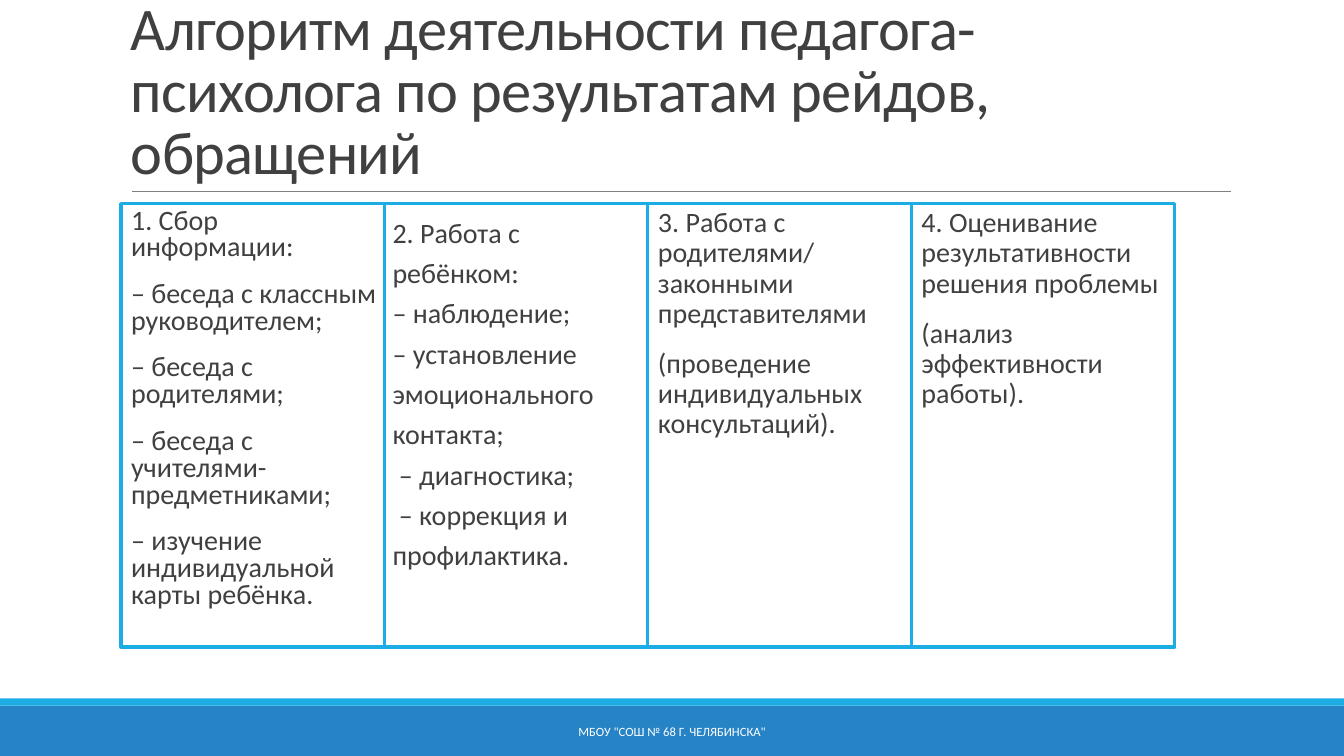
from pptx import Presentation
from pptx.dml.color import RGBColor
from pptx.enum.shapes import MSO_CONNECTOR, MSO_SHAPE
from pptx.enum.text import MSO_ANCHOR, PP_ALIGN
from pptx.oxml.ns import qn
from pptx.util import Inches, Pt

BLUE = RGBColor(0x26, 0x83, 0xC6)
CYAN = RGBColor(0x1C, 0xAD, 0xE4)
GRAY = RGBColor(0x80, 0x80, 0x80)
DARK = RGBColor(0x40, 0x40, 0x40)
WHITE = RGBColor(0xFF, 0xFF, 0xFF)
FONT = "Calibri"

# Grid of the four stage boxes, in inches
GRID_LEFT, GRID_TOP = 1.2, 2.02
COL_W, ROW_H = 2.613, 4.4

TITLE = "Алгоритм деятельности педагога-психолога по результатам рейдов, обращений"
FOOTER = 'МБОУ "СОШ № 68 Г. ЧЕЛЯБИНСКА"'

# Each stage: line spacing, space before, space after, left indent, paragraphs
STAGES = [
    (0.8, 12, 2, 0.1, [
        "1. Сбор информации:",
        "– беседа с классным руководителем;",
        "– беседа с родителями;",
        "– беседа с учителями-предметниками;",
        "– изучение индивидуальной карты ребёнка.",
    ]),
    (1.2, 0, 0, 0.08, [
        "2. Работа с ребёнком:",
        "– наблюдение;",
        "– установление эмоционального контакта;",
        " – диагностика;",
        " – коррекция и профилактика.",
    ]),
    (0.9, 12, 2, 0.1, [
        "3. Работа с родителями/ законными представителями",
        "(проведение индивидуальных консультаций).",
    ]),
    (0.9, 12, 2, 0.1, [
        "4. Оценивание результативности решения проблемы",
        "(анализ эффективности работы).",
    ]),
]


def add_rect(s, left, top, width, height, fill=None, line=None):
    sp = s.shapes.add_shape(MSO_SHAPE.RECTANGLE, Inches(left), Inches(top),
                            Inches(width), Inches(height))
    sp.shadow.inherit = False
    if fill is None:
        sp.fill.background()
    else:
        sp.fill.solid()
        sp.fill.fore_color.rgb = fill
    if line is None:
        sp.line.fill.background()
    else:
        sp.line.color.rgb = line
        sp.line.width = Pt(2.25)
    return sp


def add_rule(s, left, right, y):
    line = s.shapes.add_connector(MSO_CONNECTOR.STRAIGHT, Inches(left), Inches(y),
                                  Inches(right), Inches(y))
    line.line.color.rgb = GRAY
    line.line.width = Pt(0.5)
    sp_pr = line._element.spPr
    sp_pr.append(sp_pr.makeelement(qn("a:effectLst"), {}))


def style(p, size, color, align=PP_ALIGN.LEFT, spacing=1.0):
    p.alignment = align
    p.line_spacing = spacing
    p.font.name = FONT
    p.font.size = Pt(size)
    p.font.color.rgb = color


def add_label(s, text, left, top, width, height, anchor):
    tf = s.shapes.add_textbox(Inches(left), Inches(top), Inches(width),
                              Inches(height)).text_frame
    tf.word_wrap = True
    tf.vertical_anchor = anchor
    tf.text = text
    return tf.paragraphs[0]


def add_stage(s, column, spacing, before, after, indent, lines):
    sp = add_rect(s, GRID_LEFT + column * COL_W, GRID_TOP, COL_W, ROW_H, line=CYAN)
    tf = sp.text_frame
    tf.word_wrap = True
    tf.vertical_anchor = MSO_ANCHOR.TOP
    tf.margin_left = tf.margin_right = 0
    tf.text = "\n".join(lines)
    for p in tf.paragraphs:
        style(p, 20, DARK, spacing=spacing)
        p.space_before, p.space_after = Pt(before), Pt(after)
        p._p.get_or_add_pPr().set("marL", str(Inches(indent)))


def main():
    prs = Presentation()
    prs.slide_width, prs.slide_height = Inches(13.33), Inches(7.5)
    s = prs.slides.add_slide(prs.slide_layouts[6])

    # Footer bands and the rule under the title
    add_rect(s, 0, 7, 13.33, 0.5, fill=BLUE)
    add_rect(s, 0, 6.93, 13.33, 0.07, fill=CYAN)
    add_rule(s, 1.31, 12.21, 1.9)

    # Title, slightly condensed
    p = add_label(s, TITLE, 1.2, 0.31, 11, 1.59, MSO_ANCHOR.BOTTOM)
    style(p, 43.2, DARK, spacing=0.85)
    p._p.pPr.find(qn("a:defRPr")).set("spc", "-50")

    # Stages
    for column, stage in enumerate(STAGES):
        add_stage(s, column, *stage)

    # Footer text
    p = add_label(s, FOOTER, 4.03, 7.06, 5.27, 0.4, MSO_ANCHOR.MIDDLE)
    style(p, 9, WHITE, align=PP_ALIGN.CENTER)

    prs.save("out.pptx")


if __name__ == "__main__":
    main()
